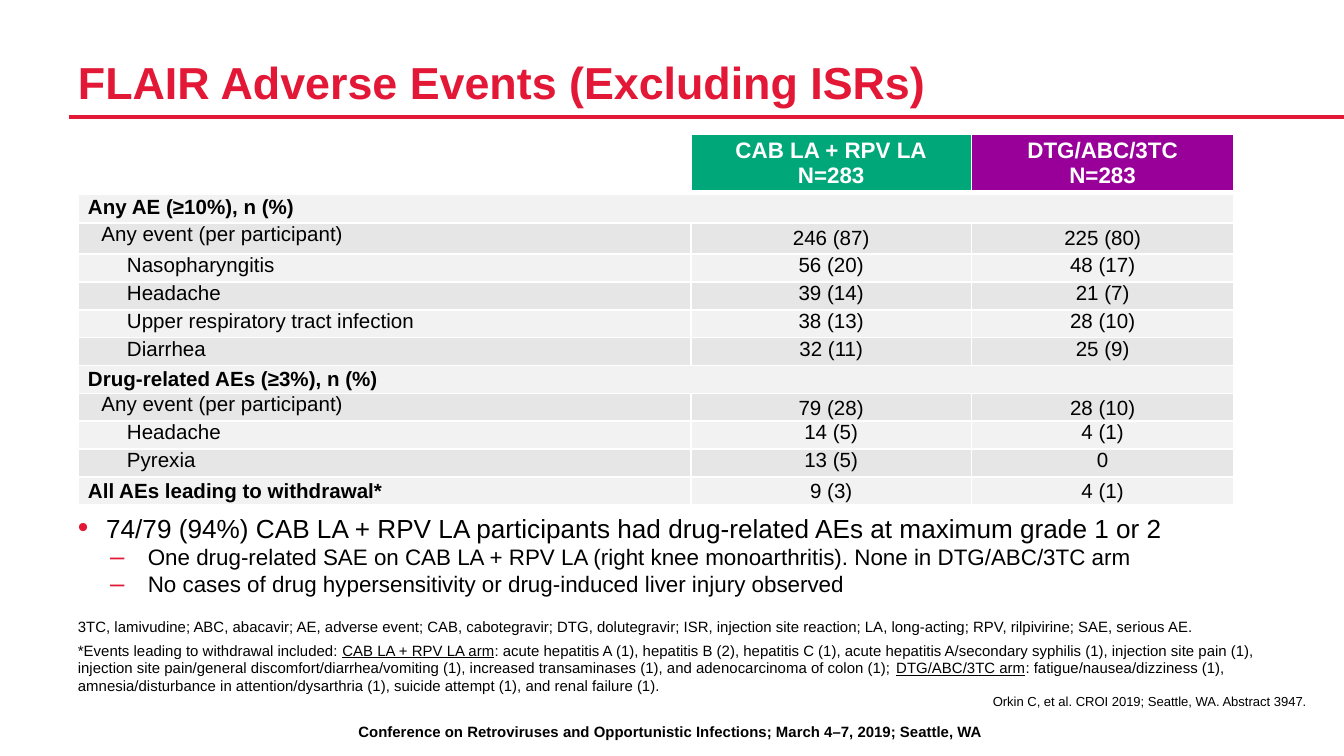
from dataclasses import dataclass
from typing import NamedTuple

from lxml.etree import SubElement
from pptx import Presentation
from pptx.dml.color import RGBColor
from pptx.enum.shapes import MSO_CONNECTOR
from pptx.enum.text import MSO_ANCHOR, PP_ALIGN
from pptx.oxml.ns import qn
from pptx.util import Inches, Pt

SLIDE_WIDTH = Inches(10)
SLIDE_HEIGHT = SLIDE_WIDTH * 9 // 16


@dataclass(frozen=True)
class Theme:
    font: str = "Arial"
    red: str = "E31836"
    black: str = "000000"
    white: str = "FFFFFF"
    green: str = "00A779"
    purple: str = "990099"
    stripes: tuple = ("E6E6E6", "F2F2F2")
    title: int = 24
    bullet: int = 14
    detail: int = 12
    cell: int = 11
    note: int = 8
    source: int = 7


THEME = Theme()


class Place(NamedTuple):
    """Left, top, width and height in percent of the slide."""
    left: float
    top: float
    width: float
    height: float

    def lengths(self) -> list:
        sides = (SLIDE_WIDTH, SLIDE_HEIGHT) * 2
        return [int(side * share / 100) for side, share in zip(sides, self)]


class Span(NamedTuple):
    text: str
    format: dict = {}


class RowStyle(NamedTuple):
    """Bold label, label indent, label and value anchors, value line spacing."""
    bold: bool
    indent: float
    label_anchor: MSO_ANCHOR
    value_anchor: MSO_ANCHOR
    spacing: float = 1.0


class Row(NamedTuple):
    style: RowStyle
    label: str
    values: tuple = ()


TOP, MIDDLE = MSO_ANCHOR.TOP, MSO_ANCHOR.MIDDLE
HEADING = RowStyle(True, 0, MIDDLE, MIDDLE)
OVERALL = RowStyle(False, 0.1, TOP, MIDDLE)
OVERALL_LOOSE = OVERALL._replace(spacing=1.07)
EVENT = RowStyle(False, 0.29, TOP, TOP)

COLUMN_WIDTHS = (4.56, 2.09, 1.95)
TABLE_HEIGHT = 2.76
TALL_ROWS = [0.43, 0.23, 0.23]
ARMS = (("CAB LA + RPV LA\vN=283", THEME.green), ("DTG/ABC/3TC\vN=283", THEME.purple))
ROWS = (
    Row(HEADING, "Any AE (≥10%), n (%)"),
    Row(OVERALL, "Any event (per participant)", ("246 (87)", "225 (80)")),
    Row(EVENT, "Nasopharyngitis", ("56 (20)", "48 (17)")),
    Row(EVENT, "Headache", ("39 (14)", "21 (7)")),
    Row(EVENT, "Upper respiratory tract infection", ("38 (13)", "28 (10)")),
    Row(EVENT, "Diarrhea", ("32 (11)", "25 (9)")),
    Row(HEADING, "Drug-related AEs (≥3%), n (%)"),
    Row(OVERALL_LOOSE, "Any event (per participant)", ("79 (28)", "28 (10)")),
    Row(EVENT, "Headache", ("14 (5)", "4 (1)")),
    Row(EVENT, "Pyrexia", ("13 (5)", "0")),
    Row(HEADING, "All AEs leading to withdrawal*", ("9 (3)", "4 (1)")),
)


def format_paragraph(para, size: float, color: str = THEME.black, **font_format) -> None:
    """Give every span and line break of a paragraph its font."""
    for span in para.runs:
        span.font.color.rgb = RGBColor.from_string(color)
        for name, value in {"name": THEME.font, "size": Pt(size), **font_format}.items():
            setattr(span.font, name, value)
    for line_break in para._p.findall(qn("a:br")):
        SubElement(line_break, qn("a:rPr"), sz=str(size * 100))


def set_indent(para, margin: float, hanging: float = 0, bullet: str = "") -> None:
    properties = para._p.get_or_add_pPr()
    properties.set("marL", str(Inches(margin)))
    properties.set("indent", str(-Inches(hanging)))
    if bullet:
        color = SubElement(properties, qn("a:buClr"))
        SubElement(color, qn("a:srgbClr"), val=THEME.red)
        SubElement(properties, qn("a:buSzPct"), val="115000")
        SubElement(properties, qn("a:buFont"), typeface=THEME.font)
        SubElement(properties, qn("a:buChar"), char=bullet)


def add_box(page, place: Place, lines: list, size: float, color: str = THEME.black,
            anchor=TOP, para_format: dict = {}, **font_format) -> list:
    """Add a text box without insets; each line is a list of spans."""
    frame = page.shapes.add_textbox(*place.lengths()).text_frame
    frame.word_wrap = True
    frame.vertical_anchor = anchor
    for side in ("left", "top", "right", "bottom"):
        setattr(frame, f"margin_{side}", 0)
    for index, spans in enumerate(lines):
        para = frame.add_paragraph() if index else frame.paragraphs[0]
        for name, value in para_format.items():
            setattr(para, name, value)
        for text, _ in spans:
            para.add_run().text = text
        format_paragraph(para, size, color, **font_format)
        for run, span in zip(para.runs, spans):
            for name, value in span.format.items():
                setattr(run.font, name, value)
    return list(frame.paragraphs)


def style_cell(cell, fill: str = "", borders: dict = {}, anchor=MIDDLE) -> None:
    cell.vertical_anchor = anchor
    margins = {"left": Pt(5.4), "right": Pt(5.4), "top": 0, "bottom": 0}
    for side, margin in margins.items():
        setattr(cell, f"margin_{side}", margin)
    properties = cell._tc.get_or_add_tcPr()
    for side, width in borders.items():
        border = SubElement(properties, qn(f"a:ln{side}"), w=str(Pt(width)))
        paint = SubElement(border, qn("a:solidFill"))
        SubElement(paint, qn("a:srgbClr"), val=THEME.white)
    if fill:
        cell.fill.solid()
        cell.fill.fore_color.rgb = RGBColor.from_string(fill)
    else:
        cell.fill.background()


def write_cell(cell, text: str, size: float, color: str = THEME.black,
               bold: bool = False, align=PP_ALIGN.CENTER):
    para = cell.text_frame.paragraphs[0]
    para.text = text
    para.alignment = align
    format_paragraph(para, size, color, bold=bold)
    return para


def add_events_table(page, place: Place) -> None:
    table = page.shapes.add_table(len(ROWS) + 1, len(COLUMN_WIDTHS), *place.lengths()).table
    for column, width in zip(table.columns, COLUMN_WIDTHS):
        column.width = Inches(width)
    # The rows below the tall ones share the remaining height
    low_count = len(ROWS) + 1 - len(TALL_ROWS)
    low_height = (TABLE_HEIGHT - sum(TALL_ROWS)) / low_count
    for line, height in zip(table.rows, TALL_ROWS + [low_height] * low_count):
        line.height = Inches(height)
    # Treatment arms
    header_borders = {"L": 1, "R": 1, "T": 1, "B": 3}
    style_cell(table.cell(0, 0), borders=header_borders)
    for column, (arm, fill) in enumerate(ARMS, 1):
        style_cell(table.cell(0, column), fill, header_borders)
        write_cell(table.cell(0, column), arm, THEME.detail, THEME.white, bold=True)
    # Event counts
    for index, (style, label, values) in enumerate(ROWS, 1):
        for column in range(len(COLUMN_WIDTHS)):
            anchor = style.value_anchor if column else style.label_anchor
            style_cell(table.cell(index, column), THEME.stripes[index % 2], anchor=anchor)
        name = write_cell(table.cell(index, 0), label, THEME.cell,
                          bold=style.bold, align=PP_ALIGN.LEFT)
        set_indent(name, style.indent)
        for column, value in enumerate(values, 1):
            count = write_cell(table.cell(index, column), value, THEME.cell)
            count.line_spacing = style.spacing
        if not values:
            table.cell(index, 0).merge(table.cell(index, len(COLUMN_WIDTHS) - 1))


def add_rule(page, left: float, top: float) -> None:
    start_x, start_y, *_ = Place(left, top, 0, 0).lengths()
    rule = page.shapes.add_connector(MSO_CONNECTOR.STRAIGHT, start_x, start_y, SLIDE_WIDTH, start_y)
    rule.line.color.rgb = RGBColor.from_string(THEME.red)
    rule.line.width = Pt(2)
    SubElement(rule._element.spPr, qn("a:effectLst"))


def main() -> None:
    deck = Presentation()
    deck.slide_width, deck.slide_height = SLIDE_WIDTH, SLIDE_HEIGHT
    page = deck.slides.add_slide(deck.slide_layouts[6])

    # Conference line and title
    add_box(page, Place(0.65, 95.55, 98.5, 2.3),
            [[Span("Conference on Retroviruses and Opportunistic Infections; March 4–7, 2019; Seattle, WA")]],
            THEME.note, para_format={"alignment": PP_ALIGN.CENTER}, bold=True)
    add_rule(page, 5.1, 15.47)
    add_box(page, Place(5.8, 2.2, 82.5, 12.27), [[Span("FLAIR Adverse Events (Excluding ISRs)")]],
            THEME.title, THEME.red, MSO_ANCHOR.BOTTOM, {"line_spacing": 0.9}, bold=True)

    add_events_table(page, Place(5.8, 17.78, 86, 49.07))

    # Findings
    detail = {"size": Pt(THEME.detail)}
    findings = add_box(page, Place(5.8, 67.73, 90.1, 11.38), [
        [Span("74/79 (94%) CAB LA + RPV LA participants had drug-related AEs at maximum grade 1 or 2")],
        [Span("One drug-related SAE on CAB LA + RPV LA (right knee monoarthritis). None in DTG/ABC/3TC arm", detail)],
        [Span("No cases of drug hypersensitivity or drug-induced liver injury observed", detail)],
    ], THEME.bullet)
    set_indent(findings[0], 0.21, 0.21, "•")
    for para in findings[1:]:
        para.level = 1
        set_indent(para, 0.52, 0.28, "–")

    # Footnotes and source
    underlined = {"underline": True}
    gap = {"space_after": Pt(3)}
    add_box(page, Place(5.8, 79.64, 91.4, 12.27), [
        [Span("3TC, lamivudine; ABC, abacavir; AE, adverse event; CAB, cabotegravir; DTG, dolutegravir; ISR, injection site reaction; LA, long-acting; RPV, rilpivirine; SAE, serious AE.")],
        [Span("*Events leading to withdrawal included: "), Span("CAB LA + RPV LA arm", underlined),
         Span(": acute hepatitis A (1), hepatitis B (2), hepatitis C (1), acute hepatitis A/secondary syphilis (1), injection site pain (1), injection site pain/general discomfort/diarrhea/vomiting (1), increased transaminases (1), and adenocarcinoma of colon (1); "),
         Span("DTG/ABC/3TC arm", underlined),
         Span(": fatigue/nausea/dizziness (1), amnesia/disturbance in attention/dysarthria (1), suicide attempt (1), and renal failure (1).")],
    ], THEME.note, anchor=MSO_ANCHOR.BOTTOM, para_format=gap)
    add_box(page, Place(5.8, 91.73, 91.4, 2.67),
            [[Span("Orkin C, et al. CROI 2019; Seattle, WA. Abstract 3947.")]],
            THEME.source, para_format={**gap, "alignment": PP_ALIGN.RIGHT})
    deck.save("out.pptx")


if __name__ == "__main__":
    main()
